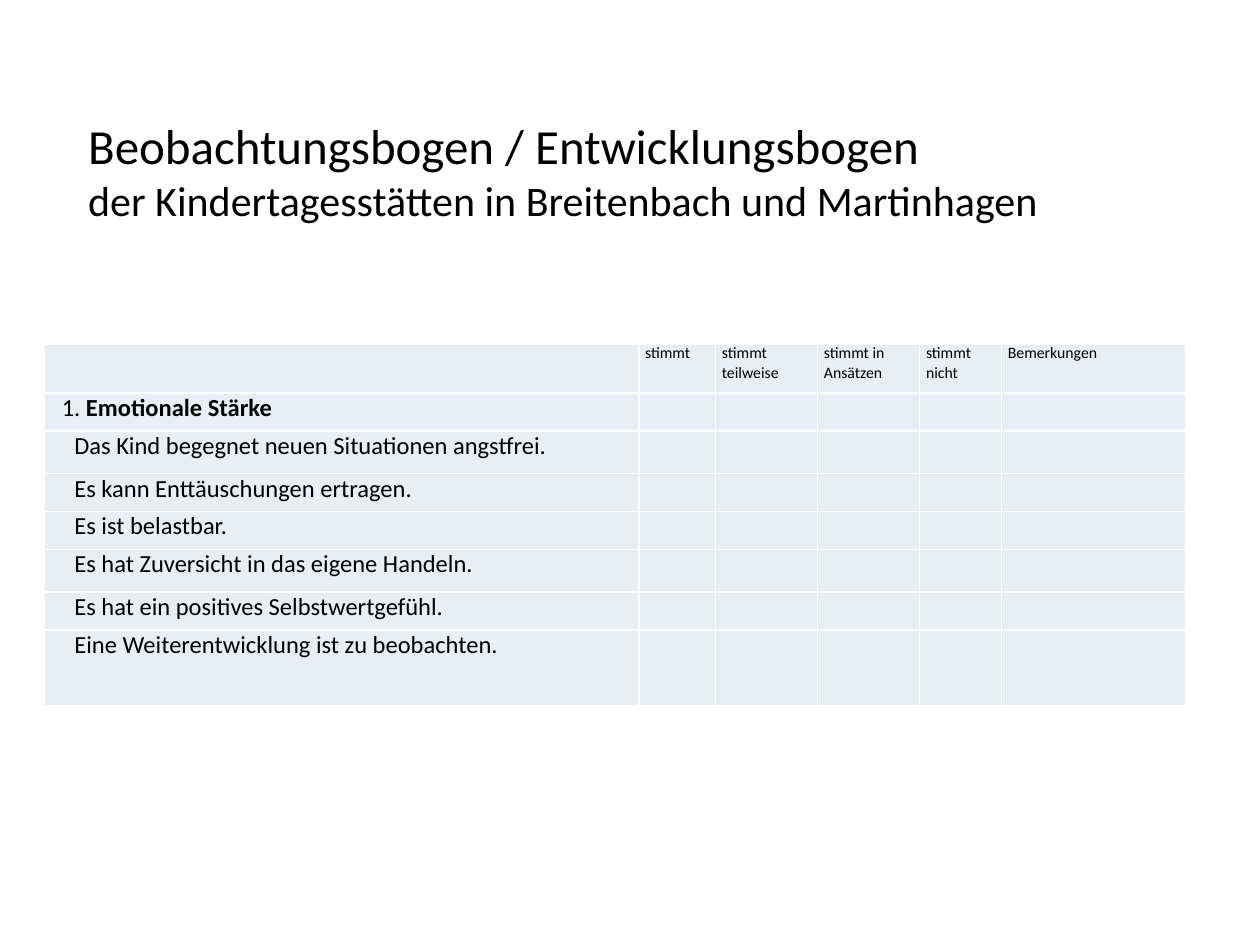
from lxml import etree
from pptx import Presentation
from pptx.dml.color import RGBColor
from pptx.enum.text import MSO_ANCHOR
from pptx.oxml.ns import qn
from pptx.util import Inches, Pt

TOP = MSO_ANCHOR.TOP
BLACK = RGBColor(0, 0, 0)
CELL_FILL = RGBColor(0xE9, 0xED, 0xF4)
FONT = "Calibri"

# Content
TITLE = [("Beobachtungsbogen / Entwicklungsbogen", 28),
         ("der Kindertagesstätten in Breitenbach und Martinhagen", 24)]
HEADERS = ["", "stimmt", "stimmt\nteilweise", "stimmt in Ansätzen",
           "stimmt nicht", "Bemerkungen"]
SECTION = ("1. ", "Emotionale Stärke")
STATEMENTS = [
    "Das Kind begegnet neuen Situationen angstfrei.",
    "Es kann Enttäuschungen ertragen.",
    "Es ist belastbar.",
    "Es hat Zuversicht in das eigene Handeln.",
    "Es hat ein positives Selbstwertgefühl.",
    "Eine Weiterentwicklung ist zu beobachten.",
]
COL_WIDTHS = [4.72, 0.61, 0.81, 0.81, 0.65, 1.46]
ROW_HEIGHTS = [0.39, 0.3, 0.34, 0.3, 0.3, 0.34, 0.3, 0.6]
CELL_FORMAT = {"margin_left": Inches(0.05), "margin_right": Inches(0.05),
               "margin_top": 0, "margin_bottom": 0, "vertical_anchor": TOP}
TITLE_FORMAT = {"margin_left": Inches(0.98), "margin_right": Inches(0.1),
                "margin_top": Inches(0.08), "margin_bottom": 0,
                "vertical_anchor": TOP, "word_wrap": True}


def apply(obj, values):
    for name, value in values.items():
        setattr(obj, name, value)


def add_run(p, text, size, bold=False):
    r = p.add_run()
    r.text = text
    apply(r.font, {"name": FONT, "size": Pt(size), "bold": bold})
    r.font.color.rgb = BLACK


def indent(p, left, first=0):
    pPr = p._p.get_or_add_pPr()
    pPr.set("marL", str(Inches(left)))
    pPr.set("indent", str(Inches(first)))


def add_lines(tf, lines):
    for i, (text, size) in enumerate(lines):
        p = tf.add_paragraph() if i else tf.paragraphs[0]
        add_run(p, text, size)


prs = Presentation()
prs.slide_width, prs.slide_height = Inches(10), Inches(7.5)
s = prs.slides.add_slide(prs.slide_layouts[6])

# Observation table
table = s.shapes.add_table(
    len(ROW_HEIGHTS), len(COL_WIDTHS), Inches(0.35), Inches(2.73),
    Inches(sum(COL_WIDTHS)), Inches(sum(ROW_HEIGHTS))).table
apply(table, {"first_row": False, "horz_banding": False})
for col, width in zip(table.columns, COL_WIDTHS):
    col.width = Inches(width)
for row, height in zip(table.rows, ROW_HEIGHTS):
    row.height = Inches(height)
for cell in table.iter_cells():
    apply(cell, CELL_FORMAT)
    cell.fill.solid()
    cell.fill.fore_color.rgb = CELL_FILL

# Header row
for c, header in enumerate(HEADERS):
    if header:
        add_lines(table.cell(0, c).text_frame,
                  [(line, 9) for line in header.split("\n")])

# Section heading and statements
p = table.cell(1, 0).text_frame.paragraphs[0]
indent(p, 0.09)
number, heading = SECTION
add_run(p, number, 14)
add_run(p, heading, 14, bold=True)
for r, statement in enumerate(STATEMENTS, start=2):
    p = table.cell(r, 0).text_frame.paragraphs[0]
    indent(p, 0.98, -0.79)
    add_run(p, statement, 14)

# Small type in blank cells keeps the row heights
for cell in table.iter_cells():
    if not cell.text:
        p = cell.text_frame.paragraphs[0]
        etree.SubElement(p._p, qn("a:endParaRPr"), sz="900")

# Title
sp = s.shapes.add_textbox(Inches(-0.28), Inches(0.84), Inches(9.98), Inches(1.3))
apply(sp.text_frame, TITLE_FORMAT)
add_lines(sp.text_frame, TITLE)

prs.save("out.pptx")
